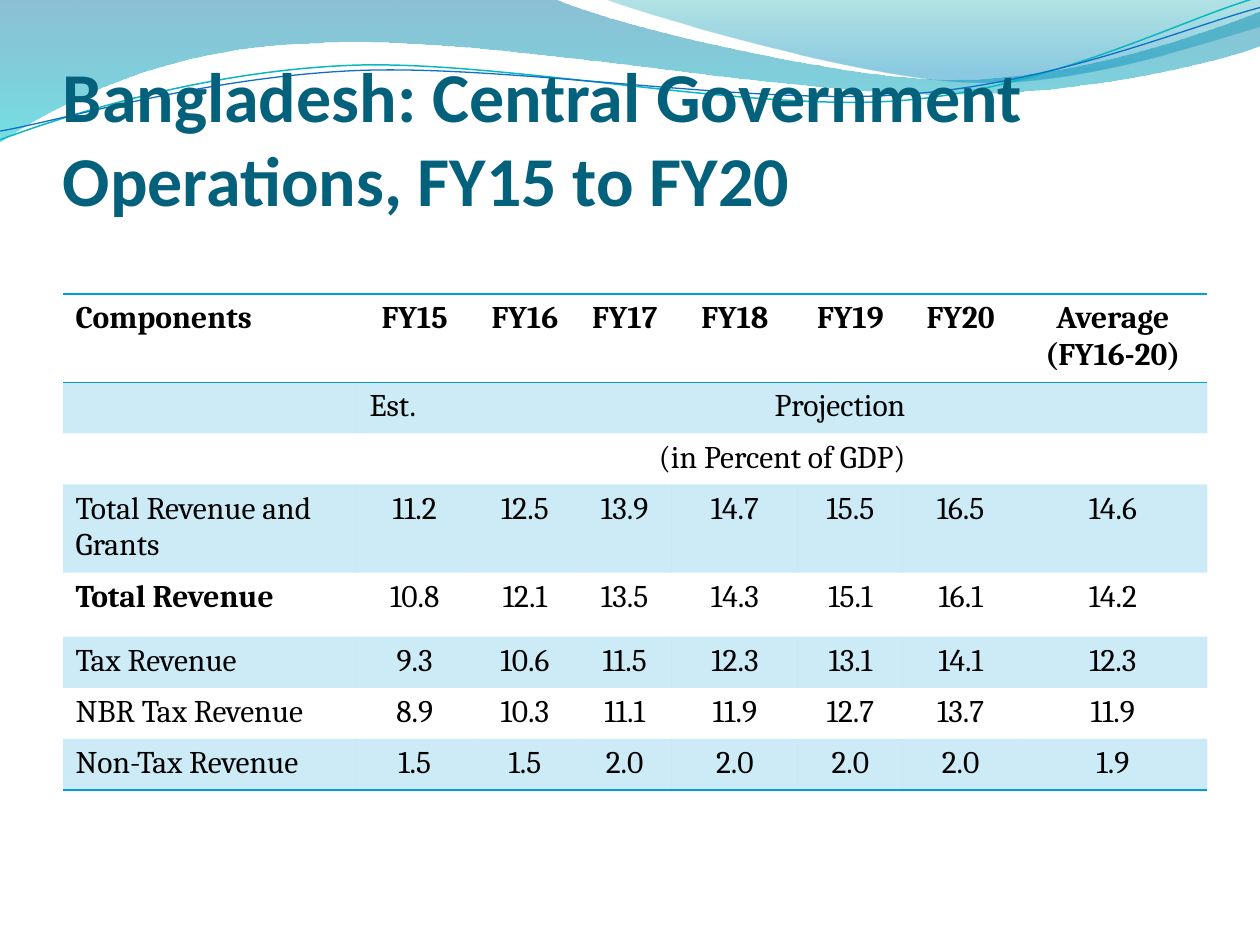
import dataclasses

import pptx
import pptx.dml.color
import pptx.enum.text
import pptx.oxml
import pptx.oxml.ns
import pptx.util

Pt = pptx.util.Pt
RGB = pptx.dml.color.RGBColor.from_string
qn = pptx.oxml.ns.qn
PP_ALIGN = pptx.enum.text.PP_ALIGN


@dataclasses.dataclass
class Theme:
    title_color: str = "04617B"
    text_color: str = "000000"
    accent: str = "009DD9"
    title_font: str = "Calibri"
    table_font: str = "Cambria"
    title_size: int = 40
    table_size: int = 18
    band_opacity: int = 20
    # gradient stops: position, colour, opacity in percent
    wide_wave: tuple = ((0, "0074A1", 45), (1, "00C6CF", 55))
    right_wave: tuple = ((0, "00A1A9", 30), (0.8, "008BBF", 45))
    teal_line: tuple = ("0AB8BF", 0.85)
    blue_line: tuple = ("0F6FC6", 0.75)


theme = Theme()
prs = pptx.Presentation()
prs.slide_width, prs.slide_height = Pt(720), Pt(540)
slide = prs.slides.add_slide(prs.slide_layouts[6])


def set_opacity(color_element, percent):
    alpha = color_element.makeelement(qn("a:alpha"), {"val": str(percent * 1000)})
    color_element.append(alpha)


def draw_wave(start, segments, close):
    """Segments hold one point (straight) or three (cubic curve), in points."""
    points = [(Pt(s[i]), Pt(s[i + 1])) for s in segments for i in range(0, len(s), 2)]
    builder = slide.shapes.build_freeform(Pt(start[0]), Pt(start[1]))
    builder.add_line_segments(points, close=close)
    wave = builder.convert_to_shape()
    wave.shadow.inherit = False
    # Join each run of three points into one cubic curve
    steps = iter(list(wave._element.spPr.iter(qn("a:lnTo"))))
    for segment in segments:
        first = next(steps)
        if len(segment) == 6:
            curve = first.makeelement(qn("a:cubicBezTo"), {})
            first.addprevious(curve)
            for step in (first, next(steps), next(steps)):
                curve.append(step[0])
                step.getparent().remove(step)
    return wave


# Filled waves across the top
wide_path = [(316.8, -0.7), (342.7, 12.2, 478.1, 45.4, 545.8, 45.4),
             (614.2, 45.4, 689.8, 18.7, 720, 6.5), (720.7, 25.9),
             (707.8, 31.7, 626.4, 54.7, 537.1, 54),
             (447.8, 54, 275, 20.2, 185, 24.5),
             (92.9, 25.9, 33.1, 59.8, -0.7, 81.4), (0, 0)]
right_path = [(366.5, 7.9, 491, 44.6, 553.7, 46.8),
              (616.3, 49.7, 691.9, 23, 720, 15.1), (720, 0), (344.9, -0.7)]
for start, segments, stops in [((0, 0), wide_path, theme.wide_wave),
                               ((344.9, -0.7), right_path, theme.right_wave)]:
    wave = draw_wave(start, segments, True)
    wave.line.fill.background()
    wave.fill.gradient()
    wave.fill.gradient_angle = 270
    for stop, (position, color, _) in zip(wave.fill.gradient_stops, stops):
        stop.position = position
        stop.color.rgb = RGB(color)
    stop_colors = wave._element.spPr.iter(qn("a:srgbClr"))
    for stop_color, (_, _, opacity) in zip(list(stop_colors), stops):
        set_opacity(stop_color, opacity)

# Thin wave lines
teal_path = [(34.6, 67, 113.8, 41, 199.4, 37.4), (284.4, 33.8, 427, 64.1, 513.4, 57.6),
             (599.8, 51.1, 675.4, 10.8, 718.6, -1.4)]
blue_path = [(33.8, 69.1, 118.1, 43.9, 203.8, 40.3), (290.2, 36.7, 429.8, 60.5, 516.2, 54),
             (601.9, 48.2, 679, 15.1, 720, 4.3)]
for start, segments, (color, width) in [((0, 79.9), teal_path, theme.teal_line),
                                        ((0, 74.9), blue_path, theme.blue_line)]:
    wave = draw_wave(start, segments, False)
    wave.fill.background()
    wave.line.color.rgb = RGB(color)
    wave.line.width = Pt(width)

# Title
title = slide.shapes.add_textbox(Pt(36), Pt(36), Pt(648), Pt(90)).text_frame
title.word_wrap = True
title.vertical_anchor = pptx.enum.text.MSO_ANCHOR.BOTTOM
title.margin_left = title.margin_right = title.margin_bottom = 0
title.margin_top = Pt(3.6)
title.text = "Bangladesh: Central Government Operations, FY15 to FY20"
title_font = title.paragraphs[0].font
title_font.name, title_font.size, title_font.bold = theme.title_font, Pt(theme.title_size), True
title_font.color.rgb = RGB(theme.title_color)

# Government operations table
operations = [
    ["Components", "FY15", "FY16", "FY17", "FY18", "FY19", "FY20", "Average\n(FY16-20)"],
    ["", "Est.", "Projection", "", "", "", "", ""],
    ["", "(in Percent of GDP)", "", "", "", "", "", ""],
    ["Total Revenue and Grants", "11.2", "12.5", "13.9", "14.7", "15.5", "16.5", "14.6"],
    ["Total Revenue", "10.8", "12.1", "13.5", "14.3", "15.1", "16.1", "14.2"],
    ["Tax Revenue", "9.3", "10.6", "11.5", "12.3", "13.1", "14.1", "12.3"],
    ["NBR Tax Revenue", "8.9", "10.3", "11.1", "11.9", "12.7", "13.7", "11.9"],
    ["Non-Tax Revenue", "1.5", "1.5", "2.0", "2.0", "2.0", "2.0", "1.9"],
]
column_widths = [168, 66, 60, 54, 72, 60, 66, 108]
row_heights = [29.2, 29.2, 29.2, 29.2, 36.6, 29.2, 29.2, 29.2]
table_frame = slide.shapes.add_table(len(row_heights), len(column_widths), Pt(36), Pt(168),
                                     Pt(sum(column_widths)), Pt(sum(row_heights)))
table = table_frame.table
table.first_row = table.horz_banding = False
no_style_no_grid = "{2D5ABB26-0587-4C30-8999-92F81FD0307C}"
table._tbl.tblPr.find(qn("a:tableStyleId")).text = no_style_no_grid
for column, width in zip(table.columns, column_widths):
    column.width = Pt(width)
for row, height in zip(table.rows, row_heights):
    row.height = Pt(height)
table_frame.height = Pt(283)  # room for the rows that wrap
table.cell(1, 2).merge(table.cell(1, 7))
table.cell(2, 1).merge(table.cell(2, 7))

last_row = len(operations) - 1
for r, entries in enumerate(operations):
    for c, entry in enumerate(entries):
        cell = table.cell(r, c)
        cell.text = entry
        for paragraph in cell.text_frame.paragraphs:
            left_aligned = c == 0 or entry == "Est."
            paragraph.alignment = PP_ALIGN.LEFT if left_aligned else PP_ALIGN.CENTER
            paragraph.font.name = theme.table_font
            paragraph.font.size = Pt(theme.table_size)
            paragraph.font.bold = r == 0 or entry == "Total Revenue"
            paragraph.font.color.rgb = RGB(theme.text_color)

        # Tinted bands on every second row
        cell_properties = cell._tc.get_or_add_tcPr()
        if r % 2:
            cell.fill.solid()
            cell.fill.fore_color.rgb = RGB(theme.accent)
            set_opacity(next(cell_properties.iter(qn("a:srgbClr"))), theme.band_opacity)
        else:
            cell.fill.background()

        # Rules around the header and under the last row
        edges = {0: ["lnB", "lnT"], last_row: ["lnB"]}.get(r, [])
        for edge in edges:
            cell_properties.insert(0, pptx.oxml.parse_xml(
                f'<a:{edge} {pptx.oxml.ns.nsdecls("a")} w="{Pt(1)}"><a:solidFill>'
                f'<a:srgbClr val="{theme.accent}"/></a:solidFill></a:{edge}>'))

prs.save("out.pptx")
